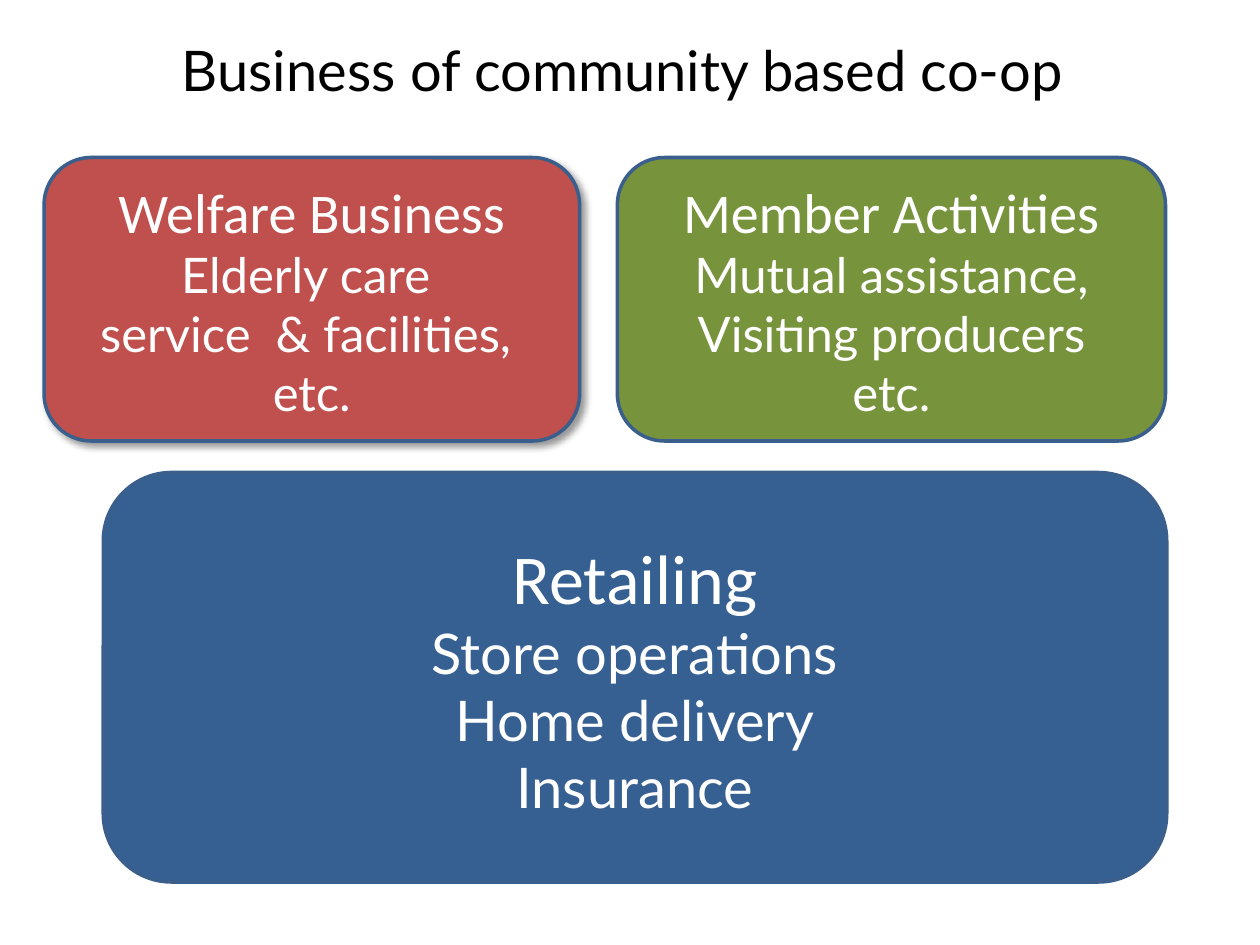
from lxml import etree
from pptx import Presentation
from pptx.dml.color import RGBColor
from pptx.enum.shapes import MSO_SHAPE
from pptx.enum.text import MSO_ANCHOR, PP_ALIGN
from pptx.oxml.ns import qn
from pptx.util import Emu, Pt

ROUNDED = MSO_SHAPE.ROUNDED_RECTANGLE
ALTERNATE = MSO_SHAPE.FLOWCHART_ALTERNATE_PROCESS
MIDDLE = MSO_ANCHOR.MIDDLE
CENTER = PP_ALIGN.CENTER

WHITE = RGBColor(0xFF, 0xFF, 0xFF)
BLACK = RGBColor(0x00, 0x00, 0x00)
BLUE = RGBColor(0x37, 0x60, 0x92)
RED = RGBColor(0xC0, 0x50, 0x4D)
GREEN = RGBColor(0x77, 0x93, 0x3C)
OUTLINE = RGBColor(0x3A, 0x5F, 0x8C)

HEADING_FONT = "Calibri"
BODY_FONT = "Lato"
PX_PER_INCH = 100


def px(length):
    return Emu(length * 914400 // PX_PER_INCH)


def write_line(paragraph, text, *, size, font, color):
    paragraph.alignment = CENTER
    run = paragraph.add_run()
    run.text = text
    run.font.size = Pt(size)
    run.font.name = font
    run.font.color.rgb = color


def add_soft_shadow(shape):
    """Cast a soft black shadow to the lower right."""
    effects = shape._element.spPr.find(qn("a:effectLst"))
    shadow = etree.SubElement(
        effects, qn("a:outerShdw"), blurRad=str(Pt(4)), dist=str(Pt(3)),
        dir=str(45 * 60000), algn="tl", rotWithShape="0")
    color = etree.SubElement(shadow, qn("a:srgbClr"), val="000000")
    etree.SubElement(color, qn("a:alpha"), val="40000")


class CoopSlide:
    def __init__(self, presentation):
        self.slide = presentation.slides.add_slide(presentation.slide_layouts[6])

    def title(self, text, left, top, width, height):
        box = self.slide.shapes.add_textbox(px(left), px(top), px(width), px(height))
        frame = box.text_frame
        frame.word_wrap = True
        frame.vertical_anchor = MIDDLE
        write_line(frame.paragraphs[0], text, size=32, font=BODY_FONT, color=BLACK)

    def panel(self, preset, left, top, width, height, fill, heading, details,
              heading_size=32, detail_size=28):
        """Draw an outlined panel with a heading above its detail lines."""
        panel = self.slide.shapes.add_shape(
            preset, px(left), px(top), px(width), px(height))
        panel.shadow.inherit = False
        panel.fill.solid()
        panel.fill.fore_color.rgb = fill
        panel.line.color.rgb = OUTLINE
        panel.line.width = Pt(2)
        frame = panel.text_frame
        frame.word_wrap = True
        frame.vertical_anchor = MIDDLE
        write_line(frame.paragraphs[0], heading,
                   size=heading_size, font=HEADING_FONT, color=WHITE)
        for detail in details:
            write_line(frame.add_paragraph(), detail,
                       size=detail_size, font=BODY_FONT, color=WHITE)
        return panel


def main():
    presentation = Presentation()
    presentation.slide_width = px(1000)
    presentation.slide_height = px(750)

    coop = CoopSlide(presentation)
    coop.panel(ROUNDED, 82, 375, 844, 325, BLUE, "Retailing",
               ["Store operations", "Home delivery", "Insurance"],
               heading_size=40, detail_size=32)
    welfare = coop.panel(ALTERNATE, 35, 125, 425, 225, RED, "Welfare Business",
                         ["Elderly care ", "service  & facilities, ", "etc."])
    add_soft_shadow(welfare)
    coop.panel(ALTERNATE, 490, 125, 435, 225, GREEN, "Member Activities",
               ["Mutual assistance,", "Visiting producers", "etc."])
    coop.title("Business of community based co-op ", 0, 17, 1000, 75)

    presentation.save("out.pptx")


if __name__ == "__main__":
    main()
